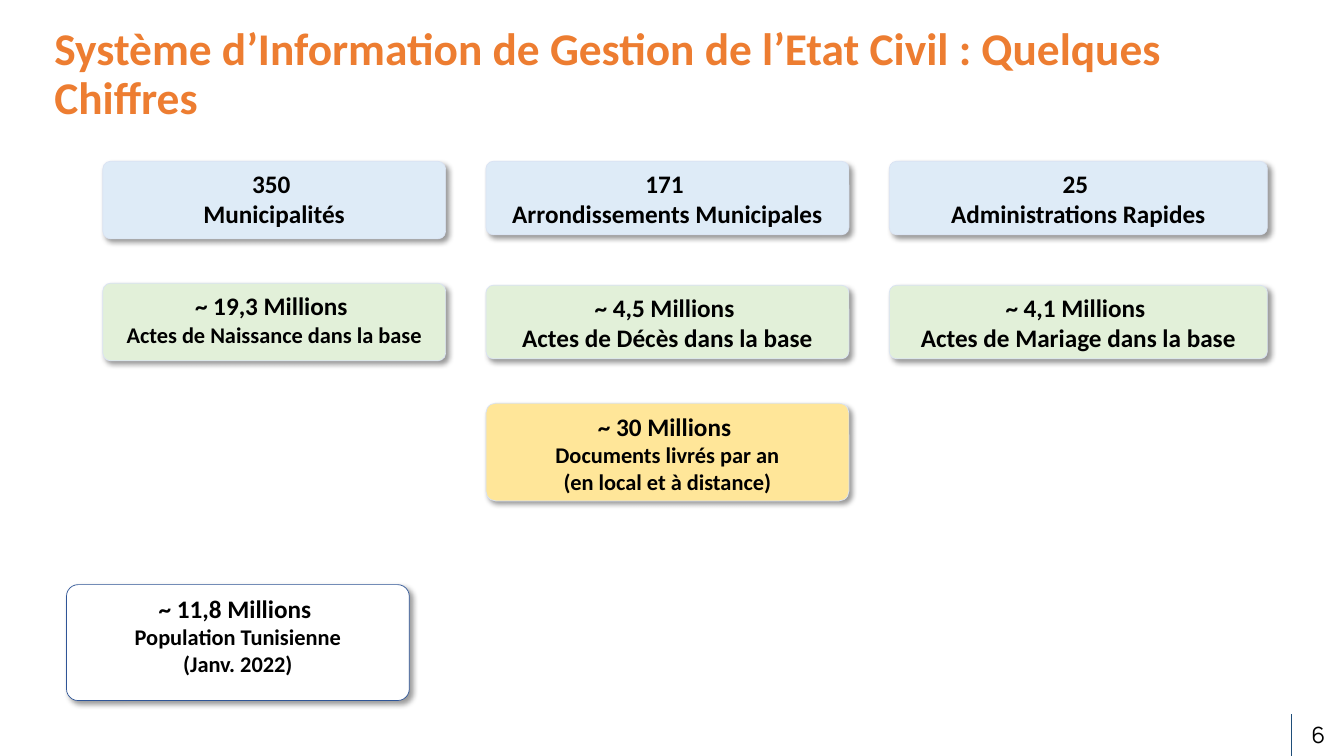
from lxml.etree import SubElement
from pptx import Presentation
from pptx.dml.color import RGBColor
from pptx.enum.shapes import MSO_SHAPE
from pptx.enum.text import MSO_ANCHOR, MSO_AUTO_SIZE, PP_ALIGN
from pptx.oxml import parse_xml
from pptx.oxml.ns import nsdecls, qn
from pptx.util import Inches, Pt

COLORS = {
    "title": "ED7D31", "text": "000000", "blue": "DEEBF7", "green": "E2F0D9",
    "gold": "FFE699", "white": "FFFFFF", "edge": "DAE3F3", "navy": "2F5597",
    "rule": "1F4E79",
}
# Left, width and height of each column of cards
COLS = [(1.02, 3.4, 0.77), (4.82, 3.6, 0.73), (8.82, 3.75, 0.73)]
TOP = 1.6
MID = 3.195

COUNTS = [
    [("350 ", 18), ("Municipalités", 18)],
    [("171 ", 18), ("Arrondissements Municipales", 18)],
    [("25 ", 18), ("Administrations Rapides", 18)],
]
ACTS = [
    [("~ 19,3 Millions ", 18), ("Actes de Naissance dans la base", 16)],
    [("~ 4,5 Millions ", 18), ("Actes de Décès dans la base", 18)],
    [("~ 4,1 Millions ", 18), ("Actes de Mariage dans la base", 18)],
]
DOCS = [("~ 30 Millions ", 18), ("Documents livrés par an", 16),
        ("(en local et à distance)", 16)]
PEOPLE = [("~ 11,8 Millions ", 18), ("Population Tunisienne", 16),
          ("(Janv. 2022)", 16)]


def color(name):
    return RGBColor.from_string(COLORS[name])


def add_run(para, text, size, tint="text", face="Calibri", bold=True):
    run = para.add_run()
    run.text = text
    font = run.font
    font.size, font.name, font.bold = Pt(size), face, bold
    font.color.rgb = color(tint)


def add_shadow(shape):
    shape.shadow.inherit = False
    effects = shape.element.spPr.find(qn("a:effectLst"))
    shade = SubElement(effects, qn("a:outerShdw"), blurRad=str(Pt(4)),
                       dist=str(Pt(3)), dir=str(45 * 60000), algn="tl",
                       rotWithShape="0")
    tint = SubElement(shade, qn("a:srgbClr"), val=COLORS["text"])
    SubElement(tint, qn("a:alpha"), val="40000")


def add_card(slide, box, lines, fill, edge="edge"):
    card = slide.shapes.add_shape(MSO_SHAPE.ROUNDED_RECTANGLE,
                                  *[Inches(n) for n in box])
    card.adjustments[0] = 0.1
    card.fill.solid()
    card.fill.fore_color.rgb = color(fill)
    card.line.color.rgb = color(edge)
    card.line.width = Pt(0.5)
    add_shadow(card)
    frame = card.text_frame
    frame.word_wrap = True
    frame.auto_size = MSO_AUTO_SIZE.SHAPE_TO_FIT_TEXT
    frame.vertical_anchor = MSO_ANCHOR.TOP
    for i, (text, size) in enumerate(lines):
        para = frame.add_paragraph() if i else frame.paragraphs[0]
        para.alignment = PP_ALIGN.CENTER
        add_run(para, text, size)


def set_title(slide, text):
    title = slide.shapes.title
    title.left, title.top = Inches(0.44), Inches(0.3)
    title.width, title.height = Inches(12.55), Inches(0.89)
    frame = title.text_frame
    frame.word_wrap = True
    frame.auto_size = MSO_AUTO_SIZE.NONE
    frame.vertical_anchor = MSO_ANCHOR.MIDDLE
    para = frame.paragraphs[0]
    para.alignment = PP_ALIGN.LEFT
    para.line_spacing = 0.9
    add_run(para, text, 32.4, "title")


def add_edge(cell, side):
    cell._tc.get_or_add_tcPr().insert(0, parse_xml(
        f'<a:{side} {nsdecls("a")} w="{Pt(1)}"><a:solidFill>'
        f'<a:srgbClr val="{COLORS["rule"]}"/></a:solidFill></a:{side}>'))


def add_footer(slide, number):
    table = slide.shapes.add_table(1, 3, Inches(0), Inches(7.09),
                                   Inches(13.33), Inches(0.41)).table
    table.first_row = table.horz_banding = False
    for col, width in zip(table.columns, (0.27, 12.54, 0.53)):
        col.width = Inches(width)
    blank, wide, last = table.rows[0].cells
    for cell in (blank, wide, last):
        cell.fill.background()
    add_edge(wide, "lnR")
    add_edge(last, "lnL")
    last.vertical_anchor = MSO_ANCHOR.MIDDLE
    para = last.text_frame.paragraphs[0]
    para.alignment = PP_ALIGN.CENTER
    add_run(para, number, 16, face="Manrope", bold=False)


def main():
    deck = Presentation()
    deck.slide_width, deck.slide_height = Inches(13.33), Inches(7.5)
    slide = deck.slides.add_slide(deck.slide_layouts[5])

    # Title and page number
    set_title(slide, "Système d’Information de Gestion de l’Etat Civil : "
                     "Quelques Chiffres")
    add_footer(slide, "6")

    # Two rows of figures: tops aligned, then centres aligned
    for (left, width, height), count, act in zip(COLS, COUNTS, ACTS):
        add_card(slide, (left, TOP, width, height), count, "blue")
        add_card(slide, (left, MID - height / 2, width, height), act, "green")

    # Documents and population
    add_card(slide, (4.82, 4, 3.6, 0.97), DOCS, "gold")
    add_card(slide, (0.66, 5.8, 3.4, 1.15), PEOPLE, "white", "navy")

    deck.save("out.pptx")


if __name__ == "__main__":
    main()
